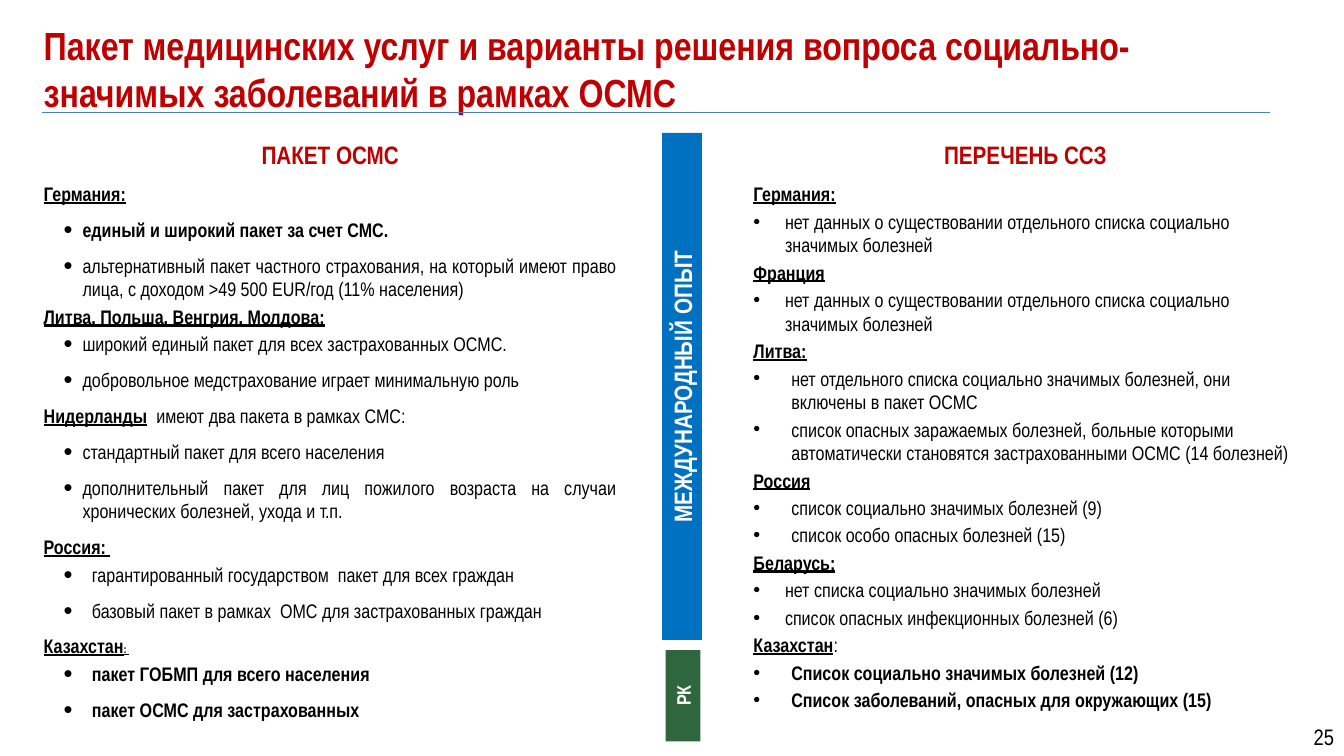
from lxml.etree import SubElement
from pptx import Presentation
from pptx.dml.color import RGBColor
from pptx.enum.dml import MSO_LINE
from pptx.enum.shapes import MSO_CONNECTOR, MSO_SHAPE
from pptx.enum.text import MSO_ANCHOR, MSO_AUTO_SIZE, PP_ALIGN
from pptx.oxml.ns import qn
from pptx.util import Pt

PX = 9525
FONT = "Arial Narrow"
RED, BLACK, WHITE = "C00000", "000000", "FFFFFF"
BLUE, GREEN, RULE = "0070C0", "2F663E", "4B7EBC"

PLAIN = {"size": 14, "bold": False}
BOLD = {"size": 14, "bold": True}
COUNTRY = {"size": 14, "bold": True, "underline": True}
SMALL_COUNTRY = {**COUNTRY, "size": 8}
HEADING = {"size": 18, "bold": True, "color": RED}

# Each entry: left margin and hanging indent in px (None for no bullet),
# space after in points, then the runs as (text, format).
PACKAGE = [
    (None, 6, ("Германия:", COUNTRY)),
    ((37, 18), 6, ("единый и широкий пакет за счет СМС.", BOLD)),
    ((37, 18), 0, ("альтернативный пакет частного страхования, на который имеют право "
                   "лица, с доходом >49 500 EUR/год (11% населения)", PLAIN)),
    (None, 0, ("Литва, Польша, Венгрия, Молдова:", COUNTRY)),
    ((37, 18), 6, ("широкий единый пакет для всех застрахованных ОСМС.", PLAIN)),
    ((37, 18), 6, ("добровольное медстрахование играет минимальную роль", PLAIN)),
    (None, 6, ("Нидерланды", COUNTRY), ("  имеют два пакета в рамках СМС:", PLAIN)),
    ((37, 18), 6, ("стандартный пакет для всего населения", PLAIN)),
    ((37, 18), 6, ("дополнительный пакет для лиц пожилого возраста на случаи "
                   "хронических болезней, ухода и т.п.", PLAIN)),
    (None, 0, ("Россия: ", COUNTRY)),
    ((46, 27), 6, ("гарантированный государством  пакет для всех граждан", PLAIN)),
    ((46, 27), 6, ("базовый пакет в рамках  ОМС для застрахованных граждан", PLAIN)),
    (None, 0, ("Казахстан", COUNTRY), (": ", SMALL_COUNTRY)),
    ((46, 27), 6, ("пакет ГОБМП для всего населения", BOLD)),
    ((46, 27), 6, ("пакет ОСМС для застрахованных", BOLD)),
]
NO_LIST = "нет данных о существовании отдельного списка социально значимых болезней"
DISEASES = [
    (None, 0, ("Германия:", COUNTRY)),
    ((30, 30), 0, (NO_LIST, PLAIN)),
    (None, 0, ("Франция", COUNTRY)),
    ((30, 30), 0, (NO_LIST, PLAIN)),
    (None, 0, ("Литва:", COUNTRY)),
    ((36, 36), 0, ("нет отдельного списка социально значимых болезней, они "
                   "включены в пакет ОСМС", PLAIN)),
    ((36, 36), 0, ("список опасных заражаемых болезней, больные которыми "
                   "автоматически становятся застрахованными ОСМС (14 болезней)", PLAIN)),
    (None, 0, ("Россия", COUNTRY)),
    ((36, 36), 0, ("список социально значимых болезней (9)", PLAIN)),
    ((36, 36), 0, ("список особо опасных болезней (15)", PLAIN)),
    (None, 0, ("Беларусь:", COUNTRY)),
    ((30, 30), 0, ("нет списка социально значимых болезней", PLAIN)),
    ((30, 30), 0, ("список опасных инфекционных болезней (6)", PLAIN)),
    (None, 0, ("Казахстан", COUNTRY), (":", PLAIN)),
    ((36, 36), 0, ("Список социально значимых болезней (12)", BOLD)),
    ((36, 36), 0, ("Список заболеваний, опасных для окружающих (15)", BOLD)),
]


def rgb(value):
    return RGBColor.from_string(value)


def emu(*lengths):
    return [length * PX for length in lengths]


def place(sp, box):
    sp.left, sp.top, sp.width, sp.height = emu(*box)


def add_run(p, text, fmt):
    r = p.add_run()
    r.text = text
    fmt = {"color": BLACK, "name": FONT, **fmt}
    r.font.color.rgb = rgb(fmt.pop("color"))
    fmt["size"] = Pt(fmt["size"])
    for name, value in fmt.items():
        setattr(r.font, name, value)


def set_bullet(p, bullet, scale):
    """Hang a bullet at the given margin, or switch it off for None."""
    margin, hang = bullet or (0, 0)
    pPr = p._p.get_or_add_pPr()
    pPr.set("marL", str(margin * PX))
    pPr.set("indent", str(-hang * PX))
    if bullet:
        SubElement(pPr, qn("a:buSzPct"), val=str(scale * 1000))
        SubElement(pPr, qn("a:buFont"), typeface="Arial")
        SubElement(pPr, qn("a:buChar"), char="•")
    else:
        SubElement(pPr, qn("a:buNone"))


def format_frame(tf, anchor):
    for name, value in {"word_wrap": True, "auto_size": MSO_AUTO_SIZE.NONE,
                        "vertical_anchor": anchor}.items():
        setattr(tf, name, value)


def fill_title(sp, box, text):
    place(sp, box)
    format_frame(sp.text_frame, MSO_ANCHOR.TOP)
    p = sp.text_frame.paragraphs[0]
    p.alignment = PP_ALIGN.LEFT
    add_run(p, text, {"size": 28, "bold": True, "color": RED})


def fill_column(sp, box, heading, items, align, bullet_scale):
    place(sp, box)
    sp.line.color.rgb = rgb(WHITE)
    sp.line.width = Pt(0.75)
    sp.line.dash_style = MSO_LINE.DASH
    tf = sp.text_frame
    format_frame(tf, MSO_ANCHOR.TOP)
    p = tf.paragraphs[0]
    set_bullet(p, None, bullet_scale)
    p.alignment, p.space_before, p.space_after = PP_ALIGN.CENTER, Pt(0), Pt(6)
    add_run(p, heading, HEADING)
    for bullet, after, *runs in items:
        p = tf.add_paragraph()
        set_bullet(p, bullet, bullet_scale)
        p.alignment, p.space_after = align, Pt(after)
        for text, fmt in runs:
            add_run(p, text, fmt)


def add_side_bar(slide, box, text, fill, size):
    """Add an upright bar filling the box, with text reading upwards."""
    x, y, w, h = box
    sp = slide.shapes.add_shape(
        MSO_SHAPE.RECTANGLE, *emu(x + (w - h) // 2, y + (h - w) // 2, h, w))
    sp.rotation = 270
    sp.shadow.inherit = False
    sp.fill.solid()
    sp.fill.fore_color.rgb = rgb(fill)
    sp.line.fill.background()
    format_frame(sp.text_frame, MSO_ANCHOR.MIDDLE)
    p = sp.text_frame.paragraphs[0]
    p.alignment = PP_ALIGN.CENTER
    add_run(p, text, {"size": size, "bold": True, "color": WHITE})


def add_title_rule(slide, x1, x2, y):
    line = slide.shapes.add_connector(MSO_CONNECTOR.STRAIGHT, *emu(x1, y, x2, y))
    line.line.color.rgb = rgb(RULE)
    line.line.width = Pt(0.75)
    SubElement(line._element.spPr, qn("a:effectLst"))


def add_page_number(slide, box, number):
    tf = slide.shapes.add_textbox(*emu(*box)).text_frame
    format_frame(tf, MSO_ANCHOR.MIDDLE)
    p = tf.paragraphs[0]
    p.alignment = PP_ALIGN.RIGHT
    add_run(p, number, {"size": 16})


def main():
    prs = Presentation()
    prs.slide_width, prs.slide_height = emu(1280, 720)
    slide = prs.slides.add_slide(prs.slide_layouts.get_by_name("Two Content"))
    title, package, diseases = slide.placeholders
    add_page_number(slide, (1142, 682, 138, 38), "25")
    fill_title(title, (32, 15, 1178, 90),
               "Пакет медицинских услуг и варианты решения вопроса "
               "социально-значимых заболеваний в рамках ОСМС")
    fill_column(package, (32, 128, 565, 578), "ПАКЕТ ОСМС", PACKAGE,
                PP_ALIGN.JUSTIFY, 130)
    fill_column(diseases, (708, 128, 537, 582), "ПЕРЕЧЕНЬ ССЗ", DISEASES,
                PP_ALIGN.LEFT, 100)
    add_side_bar(slide, (631, 127, 38, 483), "МЕЖДУНАРОДНЫЙ ОПЫТ", BLUE, 18)
    add_side_bar(slide, (634, 619, 33, 87), "РК", GREEN, 14)
    add_title_rule(slide, 40, 1210, 107)
    prs.save("out.pptx")


if __name__ == "__main__":
    main()
